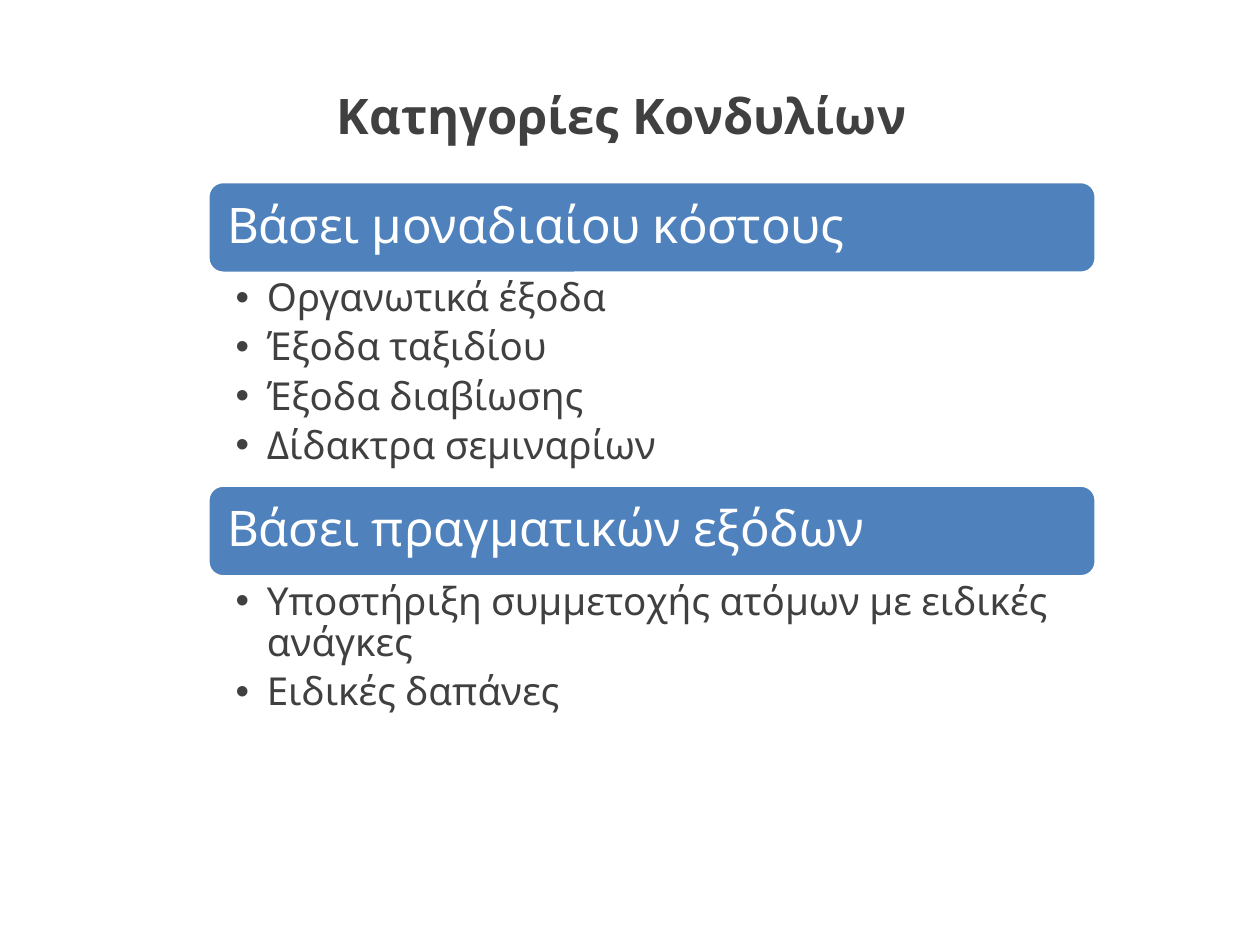
from dataclasses import dataclass

from lxml.etree import SubElement
from pptx import Presentation
from pptx.dml.color import RGBColor
from pptx.enum.shapes import MSO_SHAPE
from pptx.enum.text import MSO_ANCHOR, MSO_AUTO_SIZE, PP_ALIGN
from pptx.oxml.ns import qn
from pptx.util import Cm, Pt


@dataclass(frozen=True)
class Theme:
    font: str = "League Spartan"
    accent: RGBColor = RGBColor(0x4F, 0x81, 0xBD)
    dark: RGBColor = RGBColor(0x40, 0x40, 0x40)
    white: RGBColor = RGBColor(0xFF, 0xFF, 0xFF)
    heading: Pt = Pt(28)
    body: Pt = Pt(22)
    line_spacing: float = 0.9


THEME = Theme()
LEFT, TOP, WIDTH = Cm(4.19), Cm(3.66), Cm(17.91)
BAR_HEIGHT = Cm(1.85)

# Heading, list height, list items
SECTIONS = [
    ("Βάσει μοναδιαίου κόστους", Cm(4.27),
     ["Οργανωτικά έξοδα", "Έξοδα ταξιδίου", "Έξοδα διαβίωσης", "Δίδακτρα σεμιναρίων"]),
    ("Βάσει πραγματικών εξόδων", Cm(3.05),
     ["Υποστήριξη συμμετοχής ατόμων με ειδικές ανάγκες", "Ειδικές δαπάνες"]),
]


def place(sp, left, top, width, height):
    sp.left, sp.top, sp.width, sp.height = left, top, width, height


def set_frame(tf, anchor, side, edge):
    """Fix the frame's anchor and its side and top/bottom margins."""
    tf.word_wrap = True
    tf.auto_size = MSO_AUTO_SIZE.NONE
    tf.vertical_anchor = anchor
    tf.margin_left = tf.margin_right = side
    tf.margin_top = tf.margin_bottom = edge


def add_run(p, text, size, color, bold=False):
    r = p.add_run()
    r.text = text
    r.font.name = THEME.font
    r.font.size = size
    r.font.bold = bold
    r.font.color.rgb = color


def add_bullet(p):
    pPr = p._p.get_or_add_pPr()
    pPr.set("marL", str(Cm(0.63)))
    pPr.set("indent", str(-Cm(0.63)))
    SubElement(pPr, qn("a:buFont"), typeface="Arial")
    SubElement(pPr, qn("a:buChar"), char="•")


def fill_title(sp, text):
    place(sp, Cm(1.1), Cm(0.91), Cm(22.86), Cm(2.8))
    tf = sp.text_frame
    set_frame(tf, MSO_ANCHOR.MIDDLE, Cm(0.25), Cm(0.13))
    p = tf.paragraphs[0]
    p.alignment = PP_ALIGN.CENTER
    add_run(p, text, THEME.heading, THEME.dark, bold=True)


def add_bar(slide, top, text):
    sp = slide.shapes.add_shape(MSO_SHAPE.ROUNDED_RECTANGLE, LEFT, top, WIDTH, BAR_HEIGHT)
    sp.shadow.inherit = False
    sp.fill.solid()
    sp.fill.fore_color.rgb = THEME.accent
    sp.line.color.rgb = THEME.white
    sp.line.width = Pt(2)
    set_frame(sp.text_frame, MSO_ANCHOR.MIDDLE, Cm(0.3), Cm(0.3))
    p = sp.text_frame.paragraphs[0]
    p.alignment = PP_ALIGN.LEFT
    p.line_spacing = THEME.line_spacing
    add_run(p, text, THEME.heading, THEME.white)


def fill_list(sp, top, height, items):
    place(sp, LEFT, top, WIDTH, height)
    tf = sp.text_frame
    set_frame(tf, MSO_ANCHOR.TOP, Cm(0.56), Cm(0.1))
    for i, item in enumerate(items):
        p = tf.add_paragraph() if i else tf.paragraphs[0]
        p.level = 1
        add_bullet(p)
        p.line_spacing = THEME.line_spacing
        p.space_before = Pt(0)
        p.space_after = Pt(4.4)
        add_run(p, item, THEME.body, THEME.dark)


def main():
    prs = Presentation()
    prs.slide_width, prs.slide_height = Cm(25.4), Cm(19.05)
    two_content = prs.slide_layouts[3]
    slide = prs.slides.add_slide(two_content)
    title, *lists = list(slide.placeholders)[:3]

    fill_title(title, "Κατηγορίες Κονδυλίων")
    top = TOP
    for sp, (heading, height, items) in zip(lists, SECTIONS):
        add_bar(slide, top, heading)
        fill_list(sp, top + BAR_HEIGHT, height, items)
        top += BAR_HEIGHT + height

    prs.save("out.pptx")


if __name__ == "__main__":
    main()
